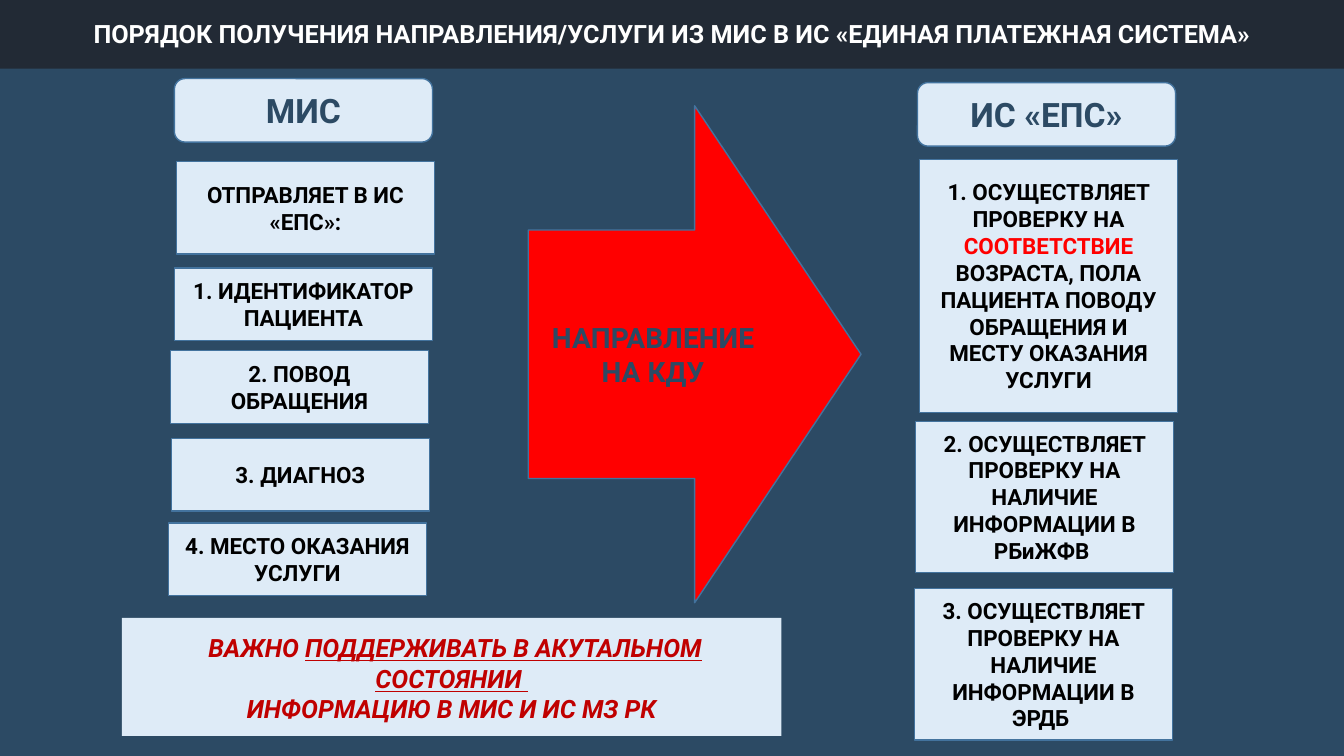
from pptx import Presentation
from pptx.dml.color import RGBColor
from pptx.enum.shapes import MSO_SHAPE as Shape
from pptx.enum.text import MSO_ANCHOR as Anchor, PP_ALIGN as Align
from pptx.util import Inches, Pt

COLORS = {
    "page": "2C4A64",
    "header": "222A35",
    "panel": "DEEBF7",
    "border": "43739E",
    "white": "FFFFFF",
    "black": "000000",
    "red": "FF0000",
    "dark red": "C00000",
}
FONT = "Roboto"
CARD_WIDTH = 2.56


def rgb(name):
    return RGBColor.from_string(COLORS[name])


def add_block(page, box, fill, border=None, kind=Shape.RECTANGLE):
    """Add a filled shape in box (left, top, width, height in inches)."""
    block = page.shapes.add_shape(kind, *map(Inches, box))
    block.shadow.inherit = False
    block.fill.solid()
    block.fill.fore_color.rgb = rgb(fill)
    if border:
        block.line.color.rgb = rgb(border)
        block.line.width = Pt(1)
    else:
        block.line.fill.background()
    frame = block.text_frame
    frame.word_wrap = True
    frame.vertical_anchor = Anchor.MIDDLE
    frame.paragraphs[0].alignment = Align.CENTER
    return block


def add_para(block):
    para = block.text_frame.add_paragraph()
    para.alignment = Align.CENTER
    return para


def add_span(para, text, size=16, color="black", bold=True, italic=False, underline=False):
    span = para.add_run()
    span.text = text
    font = span.font
    font.name = FONT
    font.size = Pt(size)
    font.color.rgb = rgb(color)
    font.bold = bold
    font.italic = italic
    font.underline = underline


def add_header(page, box, title):
    header = add_block(page, box, "header")
    add_span(header.text_frame.paragraphs[0], title, size=18, color="white")


def add_column(page, box, heading, cards):
    """Stack a rounded heading and cards of (x shift, y shift, height, spans)."""
    left, top, width, heading_height = box
    title = add_block(page, box, "panel", "border", Shape.ROUNDED_RECTANGLE)
    add_span(title.text_frame.paragraphs[0], heading, size=24, color="page")
    for shift, drop, height, spans in cards:
        card = add_block(page, (left + shift, top + drop, width, height), "panel", "border")
        for text, color in spans:
            add_span(card.text_frame.paragraphs[0], text, color=color)


def add_referral_arrow(page, box, lines):
    arrow = add_block(page, box, "red", "border", Shape.RIGHT_ARROW)
    first, second = lines
    add_span(arrow.text_frame.paragraphs[0], first, size=20, color="page")
    add_span(add_para(arrow), second, size=20, color="page")


def add_reminder(page, box):
    note = add_block(page, box, "panel")
    style = {"size": 18, "color": "dark red", "italic": True}
    para = note.text_frame.paragraphs[0]
    add_span(para, " ", size=20, color="dark red", bold=False, italic=True)
    add_span(para, "ВАЖНО ", **style)
    add_span(para, "ПОДДЕРЖИВАТЬ В АКУТАЛЬНОМ СОСТОЯНИИ ", underline=True, **style)
    add_span(add_para(note), "ИНФОРМАЦИЮ В МИС И ИС МЗ РК", **style)


def main():
    deck = Presentation()
    deck.slide_width, deck.slide_height = Inches(13.33), Inches(7.5)
    page = deck.slides.add_slide(deck.slide_layouts[6])

    add_block(page, (0, 0, 13.33, 7.5), "page")
    add_header(page, (0, -0.01, 13.33, 0.69),
               "ПОРЯДОК ПОЛУЧЕНИЯ НАПРАВЛЕНИЯ/УСЛУГИ ИЗ МИС В ИС «ЕДИНАЯ ПЛАТЕЖНАЯ СИСТЕМА»")
    add_column(page, (1.73, 0.78, CARD_WIDTH, 0.63), "МИС", [
        (0.02, 0.82, 0.92, [("ОТПРАВЛЯЕТ В ИС «ЕПС»:", "black")]),
        (0, 1.88, 0.72, [("1. ИДЕНТИФИКАТОР ПАЦИЕНТА", "black")]),
        (-0.04, 2.7, 0.72, [("2. ПОВОД ОБРАЩЕНИЯ", "black")]),
        (-0.03, 3.57, 0.72, [("3. ДИАГНОЗ", "black")]),
        (-0.06, 4.41, 0.72, [("4. МЕСТО ОКАЗАНИЯ УСЛУГИ", "black")]),
    ])
    add_referral_arrow(page, (5.24, 1.05, 3.3, 4.93), ("НАПРАВЛЕНИЕ", "НА КДУ"))
    add_column(page, (9.1, 0.82, CARD_WIDTH, 0.63), "ИС «ЕПС»", [
        (0.02, 0.76, 2.51, [
            ("1. ОСУЩЕСТВЛЯЕТ ПРОВЕРКУ НА ", "black"),
            ("СООТВЕТСТВИЕ", "red"),
            (" ВОЗРАСТА, ПОЛА ПАЦИЕНТА ПОВОДУ ОБРАЩЕНИЯ И МЕСТУ ОКАЗАНИЯ УСЛУГИ", "black"),
        ]),
        (-0.02, 3.36, 1.5,
         [("2. ОСУЩЕСТВЛЯЕТ ПРОВЕРКУ НА НАЛИЧИЕ ИНФОРМАЦИИ В РБиЖФВ ", "black")]),
        (-0.03, 5.02, 1.5,
         [("3. ОСУЩЕСТВЛЯЕТ ПРОВЕРКУ НА НАЛИЧИЕ ИНФОРМАЦИИ В ЭРДБ ", "black")]),
    ])
    add_reminder(page, (1.21, 6.13, 6.54, 1.17))
    deck.save("out.pptx")


if __name__ == "__main__":
    main()
